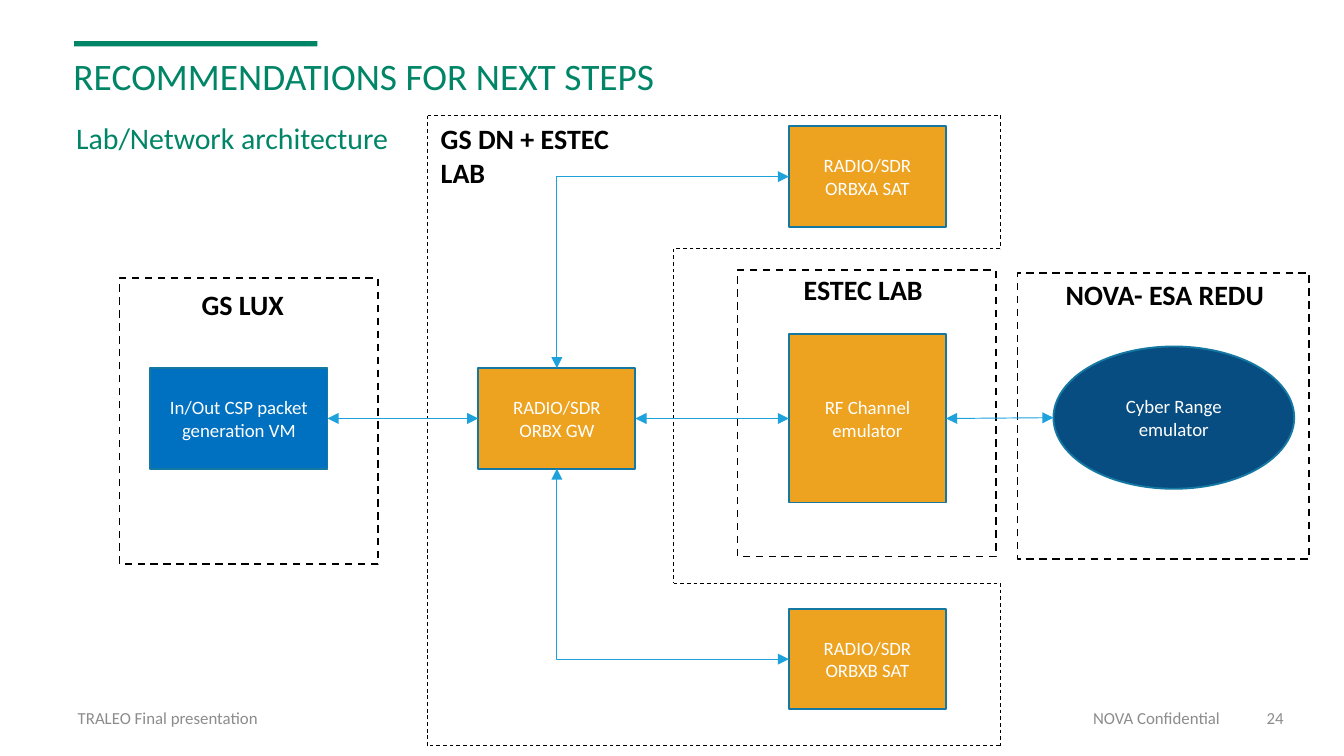
import collections
import itertools

import pptx
import pptx.dml.color
import pptx.enum.dml
import pptx.enum.shapes
import pptx.enum.text
import pptx.oxml
import pptx.oxml.ns
import pptx.util
from pptx.util import Cm

COLOURS = {
    "green": "008567", "grey": "8C8C8C", "black": "000000", "white": "FFFFFF",
    "blue": "0070C0", "navy": "084D82", "orange": "EDA220",
    "edge": "1578A3", "link": "1DA2DC",
}
FONT = "Calibri"
SHAPE = pptx.enum.shapes.MSO_SHAPE
STRAIGHT = pptx.enum.shapes.MSO_CONNECTOR.STRAIGHT
ELBOW = pptx.enum.shapes.MSO_CONNECTOR.ELBOW
ANCHOR = pptx.enum.text.MSO_ANCHOR
ALIGN = pptx.enum.text.PP_ALIGN
TOP, LEFT, BOTTOM, RIGHT = range(4)  # connection sites of a rectangle

Box = collections.namedtuple("Box", "left top width height")


def inside(box, left, top, width, height):
    """Turn offsets from the corner of a region into a box on the page."""
    return Box(box.left + left, box.top + top, width, height)


def colour(name):
    return pptx.dml.color.RGBColor.from_string(COLOURS[name])


def write(shape, text, size, ink, align=ALIGN.LEFT, anchor=ANCHOR.TOP, bold=False):
    frame = shape.text_frame
    frame.word_wrap = True
    frame.vertical_anchor = anchor
    para = frame.paragraphs[0]
    para.alignment = align
    span = para.add_run()
    span.text = text
    span.font.name = FONT
    span.font.size = pptx.util.Pt(size)
    span.font.bold = bold
    span.font.color.rgb = colour(ink)
    return para


def add_text(page, box, text, size, ink, **style):
    shape = page.shapes.add_textbox(*map(Cm, box))
    return write(shape, text, size, ink, **style)


def add_label(page, box, text):
    add_text(page, box, text, 15, "black", bold=True)


def style_line(line, ink, width, dashed=False):
    line.color.rgb = colour(ink)
    line.width = pptx.util.Pt(width)
    if dashed:
        line.dash_style = pptx.enum.dml.MSO_LINE.DASH


def add_outline(page, kind, box, fill=None):
    """Add a preset shape without shadow, filled only when a colour is given."""
    shape = page.shapes.add_shape(kind, *map(Cm, box))
    shape.shadow.inherit = False
    if fill:
        shape.fill.solid()
        shape.fill.fore_color.rgb = colour(fill)
    else:
        shape.fill.background()
    return shape


def add_node(page, box, text, fill="orange", kind=SHAPE.RECTANGLE):
    node = add_outline(page, kind, box, fill)
    style_line(node.line, "edge", 1)
    write(node, text, 10.1, "white", align=ALIGN.CENTER, anchor=ANCHOR.MIDDLE)
    return node


def add_line(page, kind, start, end, ink, dashed=False):
    line = page.shapes.add_connector(kind, *start, *end)
    style_line(line.line, ink, 0.5, dashed)
    properties = line._element.spPr
    properties.append(pptx.oxml.parse_xml(
        "<a:effectLst %s/>" % pptx.oxml.ns.nsdecls("a")))
    return line


def site_point(node, site):
    middle_x = node.left + node.width // 2
    middle_y = node.top + node.height // 2
    return {
        TOP: (middle_x, node.top),
        LEFT: (node.left, middle_y),
        BOTTOM: (middle_x, node.top + node.height),
        RIGHT: (node.left + node.width, middle_y),
    }[site]


def link(page, first, first_site, second, second_site):
    """Join two nodes with a double-headed arrow, bent once if it must turn."""
    turns = second_site in (TOP, BOTTOM)
    line = add_line(page, ELBOW if turns else STRAIGHT,
                    site_point(first, first_site),
                    site_point(second, second_site), "link")
    if turns:
        geometry = line._element.spPr.find(pptx.oxml.ns.qn("a:prstGeom"))
        geometry.set("prst", "bentConnector2")
    line.begin_connect(first, first_site)
    if second.auto_shape_type == SHAPE.RECTANGLE:
        line.end_connect(second, second_site)
    stroke = line.line._get_or_add_ln()
    for end in ("headEnd", "tailEnd"):
        stroke.append(pptx.oxml.parse_xml(
            '<a:%s %s type="triangle"/>' % (end, pptx.oxml.ns.nsdecls("a"))))


def place_heading(page, box):
    bar = add_outline(page, SHAPE.RECTANGLE, inside(box, 0.26, 0, 4.6, 0.1), "green")
    bar.line.fill.background()
    title = add_text(page, inside(box, 0, 0.19, box.width, 1.5),
                     "RECOMMENDATIONS FOR NEXT STEPS", 20, "green")
    title.line_spacing = 0.9
    add_text(page, inside(box, 0.05, 1.35, 6.7, 0.94), "Lab/Network architecture",
             16, "green", anchor=ANCHOR.BOTTOM)


def place_footer(page, box):
    for left, width, text, align in (
        (0, 15.88, "TRALEO Final presentation", ALIGN.LEFT),
        (16.92, 5.16, "NOVA Confidential", ALIGN.RIGHT),
        (22.07, 1.22, "24", ALIGN.RIGHT),
    ):
        add_text(page, inside(box, left, 0, width, box.height), text, 9, "grey",
                 align=align, anchor=ANCHOR.MIDDLE)


def place_site(page, box, label, label_at, node_at, node_text, **node_style):
    """Draw a dashed site with its label and its one node, which is returned."""
    frame = add_outline(page, SHAPE.RECTANGLE, box)
    style_line(frame.line, "black", 1, dashed=True)
    add_label(page, inside(box, *label_at, 0.89), label)
    return add_node(page, inside(box, *node_at), node_text, **node_style)


def place_ground_network(page, box):
    """Draw the C-shaped site; return its gateway and its two satellites."""
    notch_left, notch_top, notch_bottom = 4.65, 2.52, 8.84
    corners = [
        (0, 0), (box.width, 0), (box.width, notch_top), (notch_left, notch_top),
        (notch_left, notch_bottom), (box.width, notch_bottom),
        (box.width, box.height), (0, box.height),
    ]
    points = [(Cm(box.left + x), Cm(box.top + y)) for x, y in corners]
    for start, end in itertools.pairwise(points + points[:1]):
        add_line(page, STRAIGHT, start, end, "black", dashed=True)
    add_label(page, inside(box, 0, 0, 4.47, 1.55), "GS DN + ESTEC LAB")
    return [
        add_node(page, inside(box, left, top, 2.97, 1.9), "RADIO/SDR " + name)
        for left, top, name in (
            (0.96, 4.78, "ORBX GW"),
            (6.83, 0.21, "ORBXA SAT"),
            (6.83, 9.33, "ORBXB SAT"),
        )
    ]


def place_network(page, box):
    gateway, satellite_a, satellite_b = place_ground_network(
        page, inside(box, 5.82, 0, 10.82, 11.92))
    generator = place_site(
        page, inside(box, 0, 3.08, 4.88, 5.41), "GS LUX", (1.3, 0.05, 2.29),
        (0.58, 1.7, 3.35, 1.9), "In/Out CSP packet generation VM", fill="blue")
    channel = place_site(
        page, inside(box, 11.68, 2.93, 4.88, 5.41), "ESTEC LAB", (1, -0.08, 3.45),
        (0.97, 1.21, 2.97, 3.18), "RF Channel emulator")
    cyber_range = place_site(
        page, inside(box, 16.97, 2.98, 5.51, 5.41), "NOVA- ESA REDU",
        (0.66, -0.03, 4.52), (0.68, 1.39, 4.55, 2.69), "Cyber Range emulator",
        fill="navy", kind=SHAPE.OVAL)
    link(page, satellite_a, LEFT, gateway, TOP)
    link(page, satellite_b, LEFT, gateway, BOTTOM)
    for first, second in itertools.pairwise((generator, gateway, channel, cyber_range)):
        link(page, first, RIGHT, second, LEFT)


def main():
    deck = pptx.Presentation()
    deck.slide_width, deck.slide_height = Cm(25.4), Cm(14.29)
    page = deck.slides.add_slide(deck.slide_layouts[6])
    place_heading(page, Box(1.14, 0.78, 20.7, 2.29))
    place_footer(page, Box(1.22, 13.18, 23.29, 0.76))
    place_network(page, Box(2.26, 2.18, 22.48, 11.92))
    deck.save("out.pptx")


if __name__ == "__main__":
    main()
